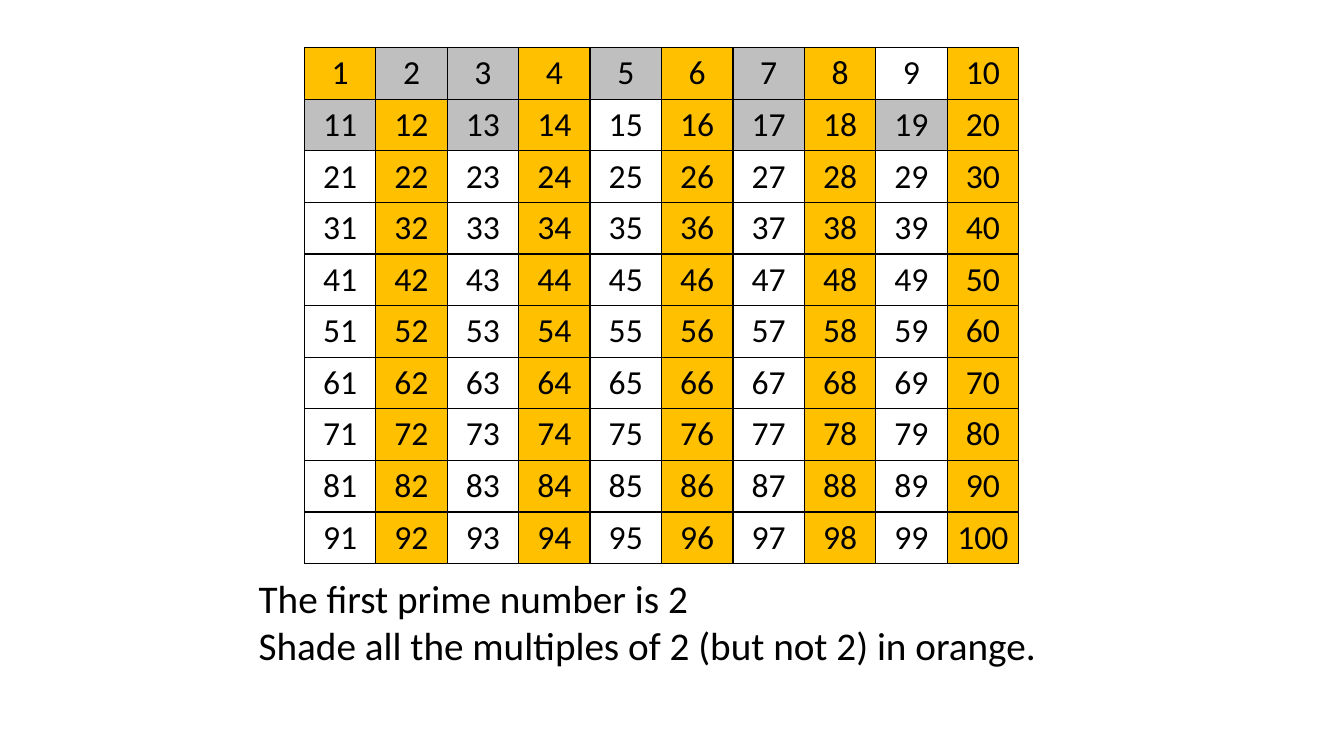
"""Build a hundred-square slide for finding prime numbers."""
import pptx
import pptx.dml.color
import pptx.enum.shapes
import pptx.enum.text
import pptx.oxml
import pptx.oxml.ns
import pptx.util
from pptx.util import Cm

COLOURS = {"orange": "FFC000", "grey": "BFBFBF", "black": "000000"}
FONT = "Calibri"
SIDE = 10
LEFT, TOP = Cm(7.67), Cm(1.2)
CELL_WIDTH, CELL_HEIGHT = Cm(1.8), Cm(1.3)
MULTIPLES = range(4, SIDE * SIDE + 1, 2)
PRIMES = (2, 3, 5, 7, 11, 13, 17, 19)
CAPTION = (
    "The first prime number is 2",
    "Shade all the multiples of 2 (but not 2) in orange.",
)


def colour(name):
    return pptx.dml.color.RGBColor.from_string(COLOURS[name])


def add_span(para, text, size):
    span = para.add_run()
    span.text = text
    span.font.name = FONT
    span.font.size = pptx.util.Pt(size)
    span.font.color.rgb = colour("black")


def add_shade(page, number, name):
    row, column = divmod(number - 1, SIDE)
    shade = page.shapes.add_shape(
        pptx.enum.shapes.MSO_SHAPE.RECTANGLE,
        LEFT + column * CELL_WIDTH, TOP + row * CELL_HEIGHT,
        CELL_WIDTH, CELL_HEIGHT)
    shade.shadow.inherit = False
    shade.fill.solid()
    shade.fill.fore_color.rgb = colour(name)
    shade.line.fill.background()


def add_borders(cell):
    properties = cell._tc.get_or_add_tcPr()
    for side in ("lnL", "lnR", "lnT", "lnB"):
        properties.append(pptx.oxml.parse_xml(
            f'<a:{side} {pptx.oxml.ns.nsdecls("a")} w="12700">'
            f'<a:solidFill><a:srgbClr val="{COLOURS["black"]}"/></a:solidFill>'
            f'</a:{side}>'))


def fill_cell(cell, number):
    cell.margin_left = cell.margin_right = Cm(0.1)
    cell.vertical_anchor = pptx.enum.text.MSO_ANCHOR.MIDDLE
    add_borders(cell)
    if number == 1:
        cell.fill.solid()
        cell.fill.fore_color.rgb = colour("orange")
    else:
        cell.fill.background()
    para = cell.text_frame.paragraphs[0]
    para.alignment = pptx.enum.text.PP_ALIGN.CENTER
    add_span(para, str(number), 24)


def add_hundred_square(page):
    table = page.shapes.add_table(
        SIDE, SIDE, LEFT, TOP, SIDE * CELL_WIDTH, SIDE * CELL_HEIGHT).table
    table.first_row = False
    table.horz_banding = False
    for number, cell in enumerate(table.iter_cells(), 1):
        fill_cell(cell, number)


def add_caption(page):
    box = page.shapes.add_textbox(Cm(6.27), Cm(14.35), Cm(20.5), Cm(2.64))
    frame = box.text_frame
    frame.word_wrap = True
    for index, text in enumerate(CAPTION):
        para = frame.add_paragraph() if index else frame.paragraphs[0]
        add_span(para, text, 28)


def main():
    deck = pptx.Presentation()
    deck.slide_width, deck.slide_height = Cm(33.87), Cm(19.05)
    page = deck.slides.add_slide(deck.slide_layouts[6])
    for number in MULTIPLES:
        add_shade(page, number, "orange")
    for number in PRIMES:
        add_shade(page, number, "grey")
    add_caption(page)
    add_hundred_square(page)
    deck.save("out.pptx")


if __name__ == "__main__":
    main()
